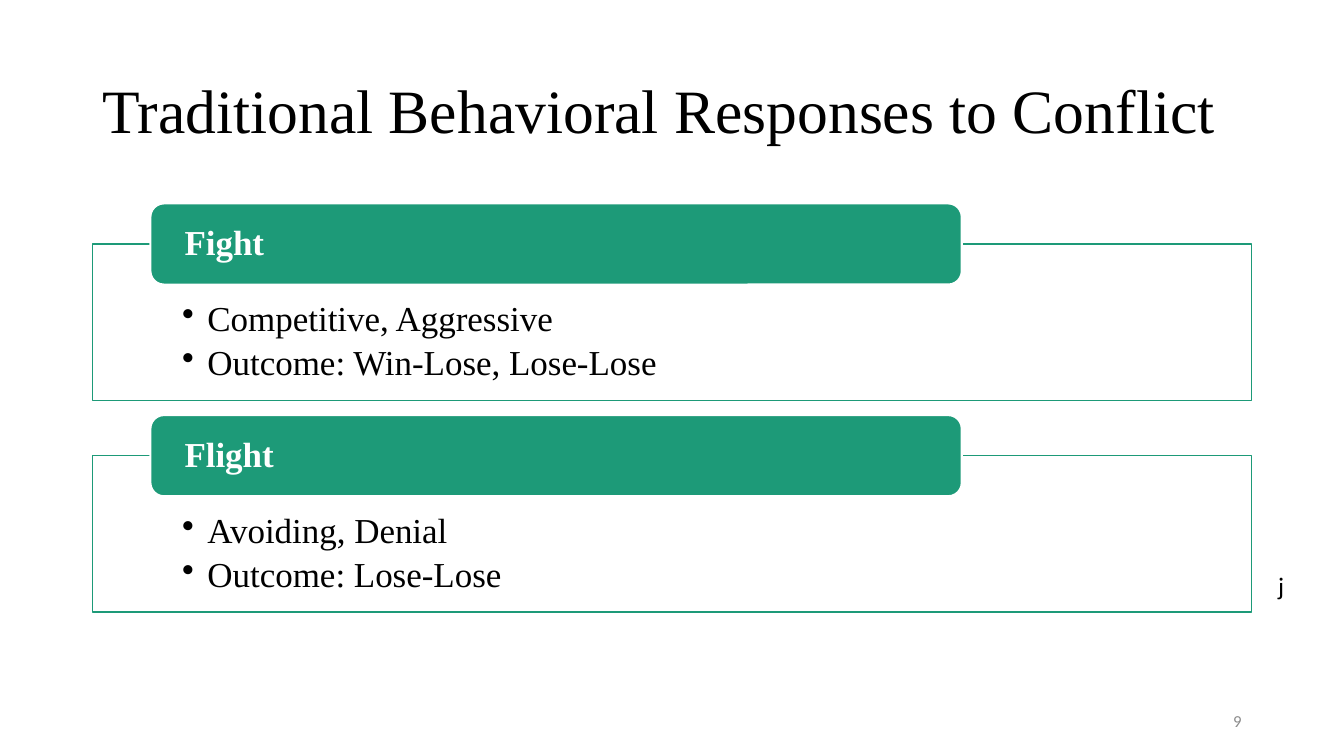
from lxml import etree
from pptx import Presentation
from pptx.dml.color import RGBColor
from pptx.enum.shapes import MSO_SHAPE
from pptx.enum.text import MSO_ANCHOR, MSO_AUTO_SIZE, PP_ALIGN
from pptx.oxml.ns import qn
from pptx.util import Pt

RECTANGLE, ROUNDED = MSO_SHAPE.RECTANGLE, MSO_SHAPE.ROUNDED_RECTANGLE
TOP, MIDDLE = MSO_ANCHOR.TOP, MSO_ANCHOR.MIDDLE
LEFT, RIGHT = PP_ALIGN.LEFT, PP_ALIGN.RIGHT
FIT_SHAPE = MSO_AUTO_SIZE.SHAPE_TO_FIT_TEXT
SERIF, SANS = "Times New Roman", "Calibri"
GREEN, WHITE, BLACK, GREY = "1D9A78", "FFFFFF", "000000", "8C8C8C"


def color(value):
    return RGBColor.from_string(value)


def write(shape, lines, font, text_color, frame_format, paragraph_format):
    frame = shape.text_frame
    for name, value in frame_format.items():
        setattr(frame, name, value)
    frame.text = "\n".join(lines)
    for paragraph in frame.paragraphs:
        for name, value in paragraph_format.items():
            setattr(paragraph, name, value)
        for run in paragraph.runs:
            for name, value in font.items():
                setattr(run.font, name, value)
            run.font.color.rgb = color(text_color)


presentation = Presentation()
presentation.slide_width, presentation.slide_height = Pt(960), Pt(540)
slide = presentation.slides.add_slide(presentation.slide_layouts[6])
shapes = slide.shapes

title = shapes.add_textbox(Pt(66), Pt(28.75), Pt(828), Pt(104.4))
write(title, ["Traditional Behavioral Responses to Conflict"],
      {"name": SERIF, "size": Pt(44)}, BLACK,
      {"word_wrap": True, "vertical_anchor": MIDDLE}, {"line_spacing": 0.9})

responses = [
    ("Fight", ["Competitive, Aggressive", "Outcome: Win-Lose, Lose-Lose"]),
    ("Flight", ["Avoiding, Denial", "Outcome: Lose-Lose"]),
]
panel_format = {"word_wrap": True, "vertical_anchor": TOP,
                "margin_left": Pt(64.2), "margin_right": Pt(64.2),
                "margin_top": Pt(41), "margin_bottom": Pt(13.7)}
tab_format = {"word_wrap": True, "vertical_anchor": MIDDLE,
              "margin_left": Pt(21.6), "margin_right": Pt(21.6),
              "margin_top": 0, "margin_bottom": 0}

for index, (heading, points) in enumerate(responses):
    panel_top = 174.3 + index * 151.2
    panel = shapes.add_shape(RECTANGLE, Pt(66), Pt(panel_top), Pt(828), Pt(111.6))
    tab = shapes.add_shape(ROUNDED, Pt(107.4), Pt(panel_top - 29), Pt(579.6), Pt(58))
    for shape, fill, line, width in ((panel, WHITE, GREEN, 1), (tab, GREEN, WHITE, 1.5)):
        shape.shadow.inherit = False
        shape.fill.solid()
        shape.fill.fore_color.rgb = color(fill)
        shape.line.color.rgb = color(line)
        shape.line.width = Pt(width)

    write(panel, points, {"name": SERIF, "size": Pt(25)}, BLACK, panel_format,
          {"alignment": LEFT, "line_spacing": 0.9, "space_after": Pt(4.5)})
    for paragraph in panel.text_frame.paragraphs:
        properties = paragraph._p.get_or_add_pPr()
        properties.set("marL", str(Pt(18)))
        properties.set("indent", str(Pt(-18)))
        etree.SubElement(properties, qn("a:buChar")).set("char", "•")

    write(tab, [heading], {"name": SERIF, "size": Pt(25), "bold": True}, WHITE,
          tab_format, {"alignment": LEFT, "line_spacing": 0.9})

page_number = shapes.add_textbox(Pt(678), Pt(500.5), Pt(216), Pt(28.75))
write(page_number, ["9"], {"name": SANS, "size": Pt(12)}, GREY,
      {"word_wrap": True, "vertical_anchor": MIDDLE},
      {"alignment": RIGHT, "space_after": Pt(6)})

letter = shapes.add_textbox(Pt(905.8), Pt(404), Pt(18.7), Pt(29))
write(letter, ["j"], {"name": SANS, "size": Pt(18)}, BLACK,
      {"word_wrap": False, "auto_size": FIT_SHAPE}, {"alignment": LEFT})

presentation.save("out.pptx")
